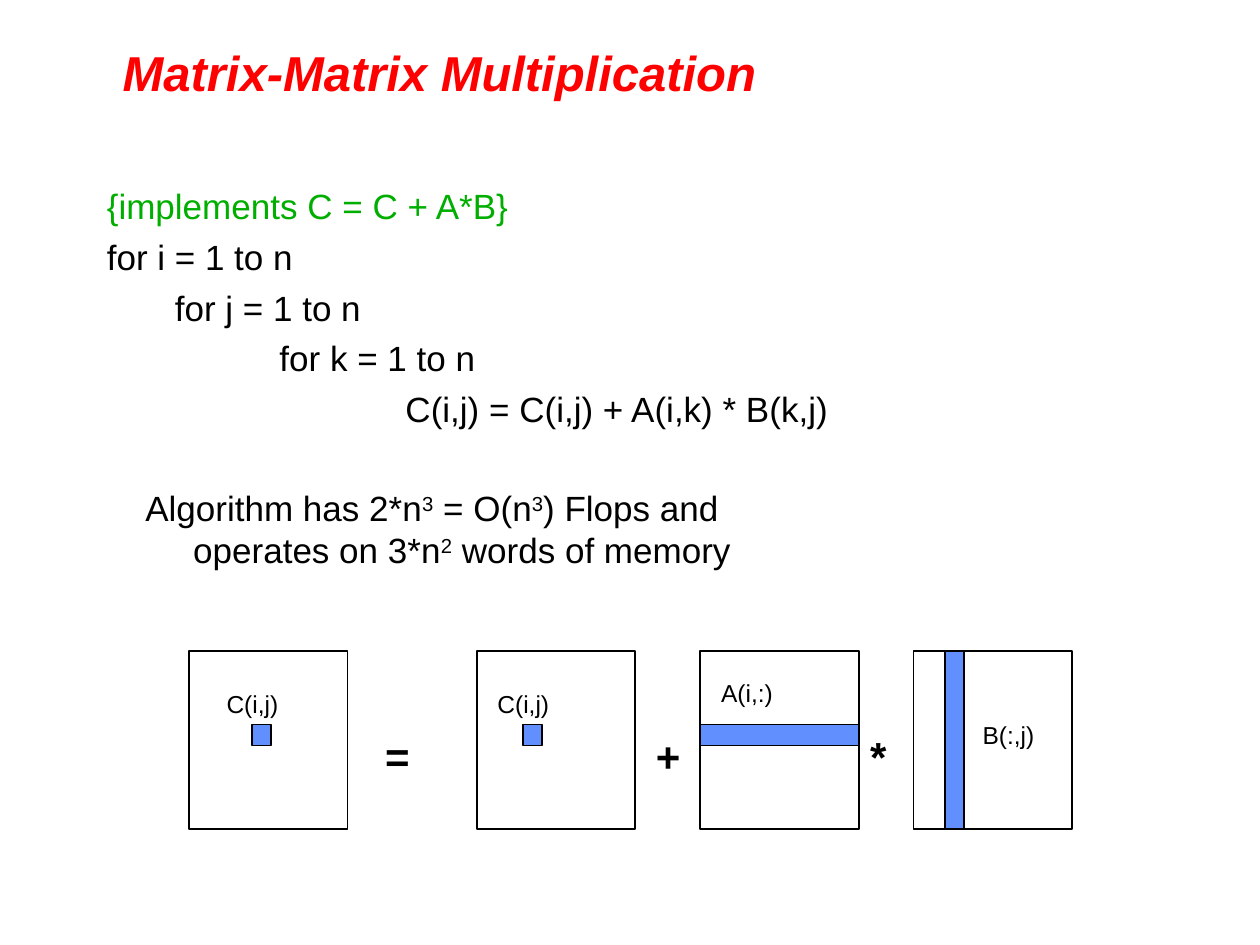
import pptx
import pptx.dml.color
import pptx.enum.shapes
import pptx.enum.text
import pptx.util

COLORS = {"title": "FF0000", "comment": "00AE00", "ink": "000000", "mark": "618FFD"}
UNIT = pptx.util.Inches(1 / 12)  # the slide is a grid of 120 columns by 90 rows
INSETS = {"margin_left": 0.1, "margin_top": 0.05, "margin_right": 0.1, "margin_bottom": 0.05}
TIGHT = {"margin_left": 0.07, "margin_top": 0.03, "margin_right": 0.07, "margin_bottom": 0.03}
LABEL = {**INSETS, "margin_right": 0}
HANG = pptx.util.Inches(0.38)


def color(name):
    return pptx.dml.color.RGBColor.from_string(COLORS[name])


def grid(*cells):
    return [round(cell * UNIT) for cell in cells]


def add_text_box(slide, box, insets=INSETS):
    frame = slide.shapes.add_textbox(*grid(*box)).text_frame
    frame.word_wrap = True
    for name, value in insets.items():
        setattr(frame, name, pptx.util.Inches(value))
    return frame


def add_run(paragraph, text, size, ink="ink", **format_values):
    run = paragraph.add_run()
    run.text = text
    values = {"name": "Arial", "size": pptx.util.Pt(size), **format_values}
    for name, value in values.items():
        setattr(run.font, name, value)
    run.font.color.rgb = color(ink)
    return run


def set_indent(paragraph, left, first=0):
    properties = paragraph._p.get_or_add_pPr()
    properties.set("marL", str(int(left)))
    properties.set("indent", str(int(first)))


def add_rectangle(slide, box, fill=None):
    shape = slide.shapes.add_shape(pptx.enum.shapes.MSO_SHAPE.RECTANGLE, *grid(*box))
    shape.shadow.inherit = False
    if fill:
        shape.fill.solid()
        shape.fill.fore_color.rgb = color(fill)
    else:
        shape.fill.background()
    shape.line.color.rgb = color("ink")
    shape.line.width = pptx.util.Pt(1)


def add_title(slide, box):
    frame = add_text_box(slide, box)
    frame.vertical_anchor = pptx.enum.text.MSO_ANCHOR.MIDDLE
    add_run(frame.paragraphs[0], "Matrix-Matrix Multiplication", 28, "title",
            bold=True, italic=True)


def add_code(slide, box):
    # Each line: text, colour, indent in inches
    lines = [
        ("{implements C = C + A*B}", "comment", 0),
        ("for i = 1 to n", "ink", 0),
        ("for j = 1 to n", "ink", 0.54),
        ("for k = 1 to n", "ink", 1.37),
        ("C(i,j) = C(i,j) + A(i,k) * B(k,j)", "ink", 2.37),
    ]
    frame = add_text_box(slide, box)
    for number, (text, ink, indent) in enumerate(lines):
        paragraph = frame.add_paragraph() if number else frame.paragraphs[0]
        paragraph.space_before = pptx.util.Pt(5 if number else 0)
        set_indent(paragraph, pptx.util.Inches(indent))
        add_run(paragraph, text, 20, ink)


def add_cost_note(slide, box):
    paragraph = add_text_box(slide, box, TIGHT).paragraphs[0]
    set_indent(paragraph, HANG, -HANG)
    pieces = ["Algorithm has 2*n", "3", " = O(n", "3",
              ") Flops and operates on 3*n", "2", " words of memory"]
    for number, text in enumerate(pieces):
        run = add_run(paragraph, text, 20)
        if number % 2:  # every second piece is an exponent
            run.font._element.set("baseline", "30000")


def add_diagram(slide, box):
    left, top, _, height = box
    side, mark_width, mark_height, mark_row = 15.1, 1.8, 2, 7
    # Each matrix: column, marked part, label, label position inside the matrix
    matrices = [
        (0, (6, mark_row, mark_width, mark_height), "C(i,j)", (2.4, 3)),
        (27.4, (4.4, mark_row, mark_width, mark_height), "C(i,j)", (0.8, 3)),
        (48.7, (0, mark_row, side, mark_height), "A(i,:)", (0.8, 2)),
        (69, (3, 0, mark_width, height), "B(:,j)", (5.4, 6)),
    ]
    for column, (x, y, width, tall), label, (label_x, label_y) in matrices:
        start = left + column
        add_rectangle(slide, (start, top, side, height))
        add_rectangle(slide, (start + x, top + y, width, tall), "mark")
        frame = add_text_box(slide, (start + label_x, top + label_y, 8.9, 4), LABEL)
        add_run(frame.paragraphs[0], label, 14)

    # Operators between the matrices
    for column, width, sign in [(17.5, 7.1, "="), (43.3, 3.6, "+"), (63.7, 2.2, "*")]:
        frame = add_text_box(slide, (left + column, top + mark_row, width, 6), LABEL)
        add_run(frame.paragraphs[0], sign, 24, bold=True)


def main():
    presentation = pptx.Presentation()
    presentation.slide_width, presentation.slide_height = grid(120, 90)
    slide = presentation.slides.add_slide(presentation.slide_layouts[6])
    add_title(slide, (10.5, 4.1, 74.4, 5.5))
    add_code(slide, (9, 17, 107, 70))
    add_diagram(slide, (18, 62, 84.1, 17))
    add_cost_note(slide, (13, 46, 61.8, 8.6))
    presentation.save("out.pptx")


if __name__ == "__main__":
    main()
